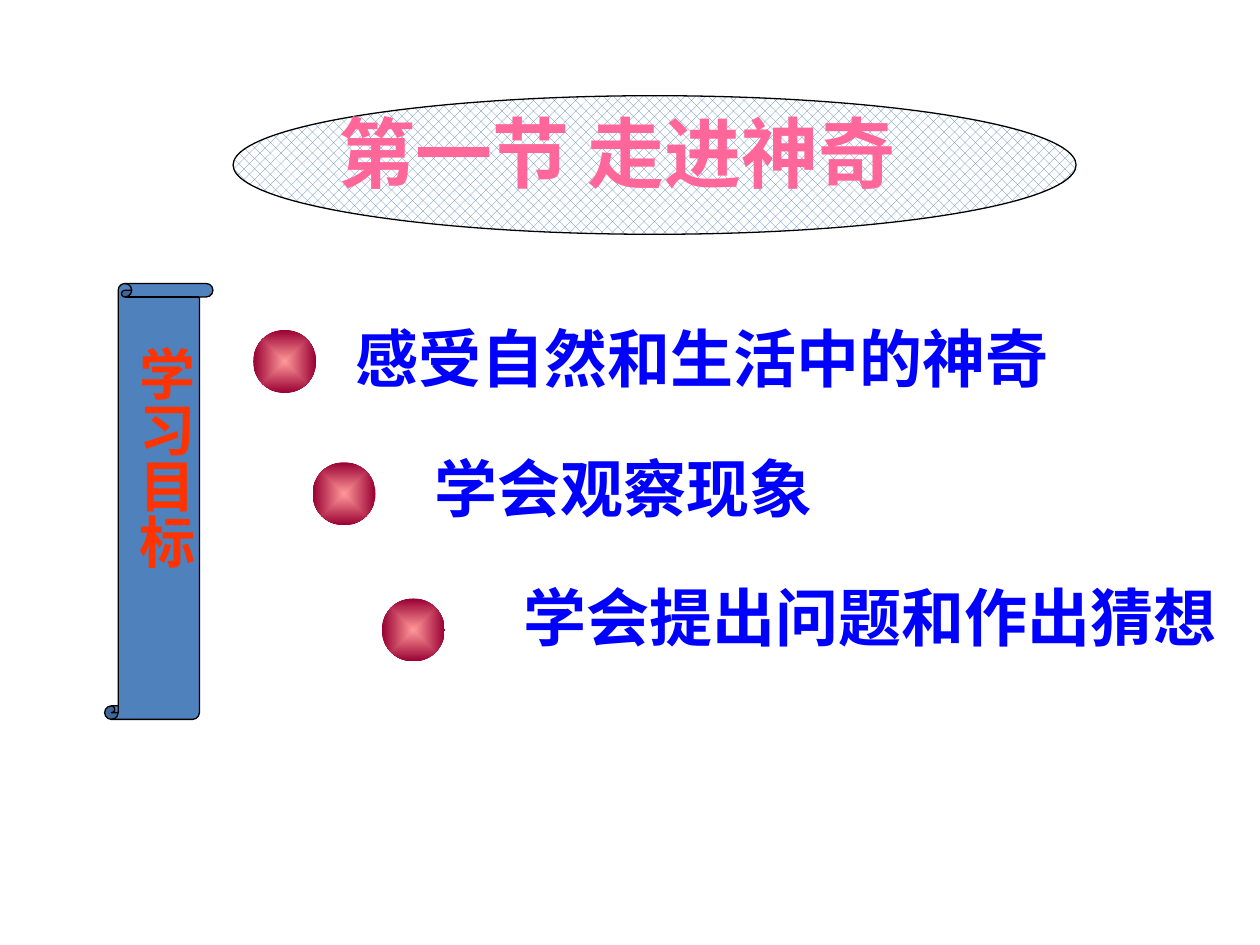
"""Build the lesson title slide with its learning goals."""
from lxml.etree import SubElement
from pptx import Presentation
from pptx.dml.color import RGBColor
from pptx.enum.dml import MSO_PATTERN_TYPE as Pattern
from pptx.enum.shapes import MSO_SHAPE as Shape
from pptx.enum.text import MSO_ANCHOR as Anchor, MSO_AUTO_SIZE as AutoSize, PP_ALIGN as Align
from pptx.oxml.ns import qn
from pptx.util import Pt

COLORS = {
    "ball_center": "FF9999",
    "ball_edge": "990033",
    "goal": "0000FF",
    "blue": "4F81BD",
    "white": "FFFFFF",
    "line": "000000",
    "title": "FF6699",
    "label": "FF3300",
}
GOALS = [
    ("感受自然和生活中的神奇", (144.7, 188.6), (195.8, 179.3, 430.6, 50.4)),
    ("学会观察现象", (178.6, 264.2), (241.2, 253.4, 257.8, 50.4)),
    ("学会提出问题和作出猜想", (218.2, 342), (292.3, 326.9, 414, 108.7)),
]
BALL_SIZE = 36


def color(name):
    return RGBColor.from_string(COLORS[name])


def write_text(frame, text, size, ink, font, align=Align.LEFT, vertical=False):
    frame.word_wrap = True
    frame.auto_size = AutoSize.SHAPE_TO_FIT_TEXT
    frame.vertical_anchor = Anchor.TOP
    frame.margin_left = frame.margin_right = Pt(7.2)
    frame.margin_top = frame.margin_bottom = Pt(3.6)
    if vertical:
        frame._txBody.bodyPr.set("vert", "eaVert")
    para = frame.paragraphs[0]
    para.alignment = align
    span = para.add_run()
    span.text = text
    span.font.size = Pt(size)
    span.font.bold = True
    span.font.color.rgb = color(ink)
    span.font.name = font
    SubElement(span.font._element, qn("a:ea"), typeface="Noto Sans CJK SC")


class SlideBuilder:
    def __init__(self, deck):
        self.slide = deck.slides.add_slide(deck.slide_layouts[5])
        self.line_width = Pt(0.75)

    def shape(self, kind, bounds, outlined=True):
        shape = self.slide.shapes.add_shape(kind, *map(Pt, bounds))
        shape.shadow.inherit = False
        if outlined:
            shape.line.color.rgb = color("line")
            shape.line.width = self.line_width
        else:
            shape.line.fill.background()
        return shape

    def ball(self, left, top):
        ball = self.shape(Shape.OVAL, (left, top, BALL_SIZE, BALL_SIZE), outlined=False)
        ball.fill.gradient()
        for stop, name in zip(ball.fill.gradient_stops, ("ball_center", "ball_edge")):
            stop.color.rgb = color(name)
        gradient = ball._element.spPr.find(qn("a:gradFill"))
        gradient.remove(gradient.find(qn("a:lin")))
        radial = SubElement(gradient, qn("a:path"), path="shape")
        SubElement(radial, qn("a:fillToRect"), l="50000", t="50000", r="50000", b="50000")

    def banner(self, bounds):
        fill = self.shape(Shape.OVAL, bounds).fill
        fill.patterned()
        fill.pattern = Pattern.from_xml("pct40")
        fill.fore_color.rgb = color("blue")
        fill.back_color.rgb = color("white")

    def scroll(self, bounds):
        fill = self.shape(Shape.VERTICAL_SCROLL, bounds).fill
        fill.solid()
        fill.fore_color.rgb = color("blue")

    def text(self, text, bounds, **style):
        box = self.slide.shapes.add_textbox(*map(Pt, bounds))
        write_text(box.text_frame, text, **style)

    def title(self, text, bounds, **style):
        title = self.slide.shapes.title
        title.left, title.top, title.width, title.height = map(Pt, bounds)
        write_text(title.text_frame, text, **style)
        self.slide.shapes._spTree.append(title._element)


def main():
    deck = Presentation()
    deck.slide_width, deck.slide_height = Pt(720), Pt(540)
    page = SlideBuilder(deck)
    for goal, ball_corner, bounds in GOALS:
        page.ball(*ball_corner)
        page.text(goal, bounds, size=36, ink="goal", font="Times New Roman")
    page.banner((133.2, 54.7, 481.7, 79.2))
    page.title("第一节 走进神奇", (186.5, 56.9, 362.9, 59.8),
               size=44, ink="title", font="Noto Sans CJK SC")
    page.scroll((59.8, 162, 61.9, 249.1))
    page.text("学习目标", (64.8, 190.8, 52.6, 181.4), size=32, ink="label",
              font="Arial", align=Align.CENTER, vertical=True)
    deck.save("out.pptx")


if __name__ == "__main__":
    main()
